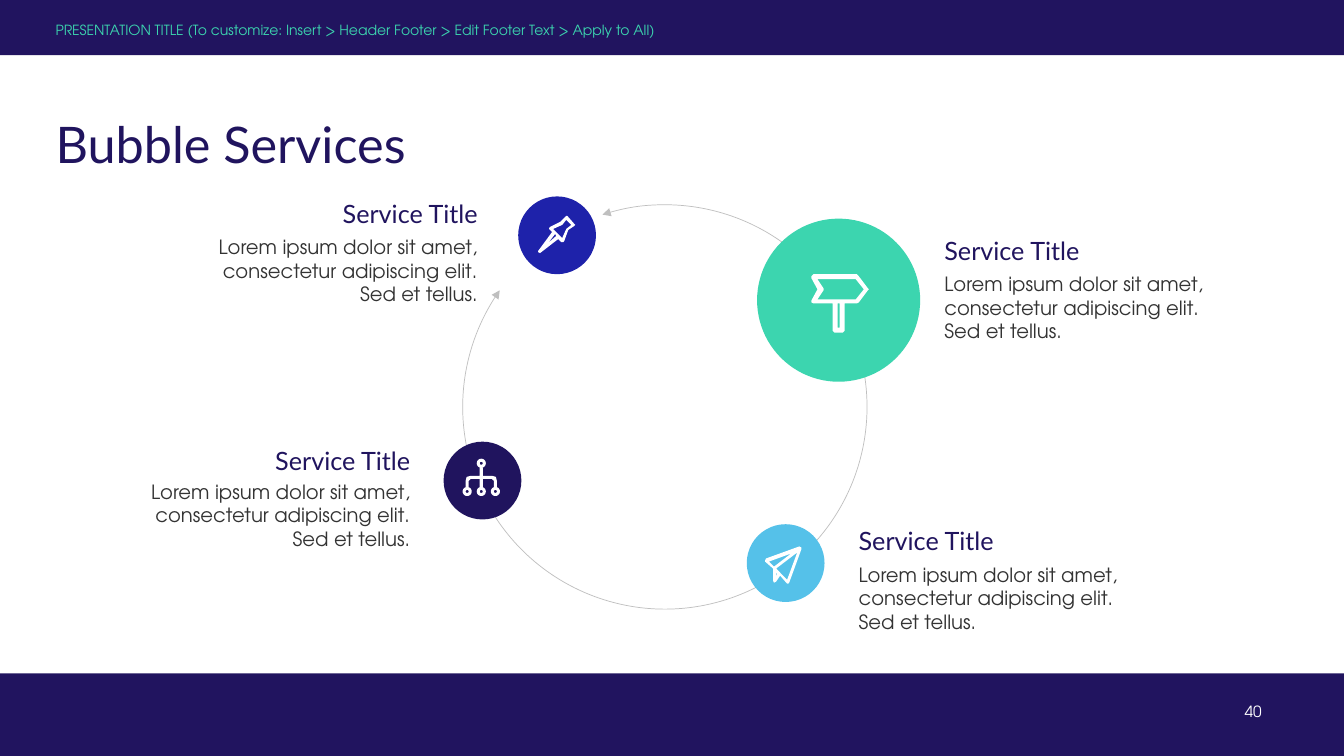
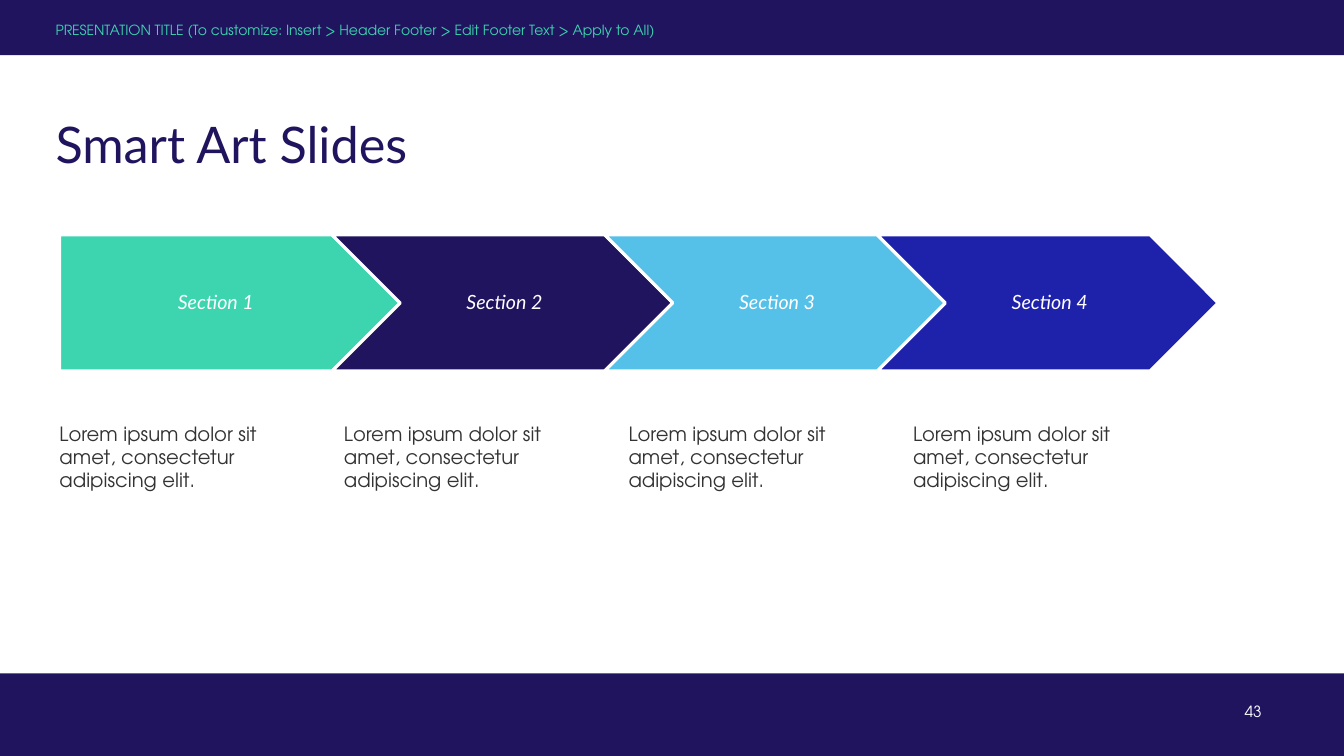
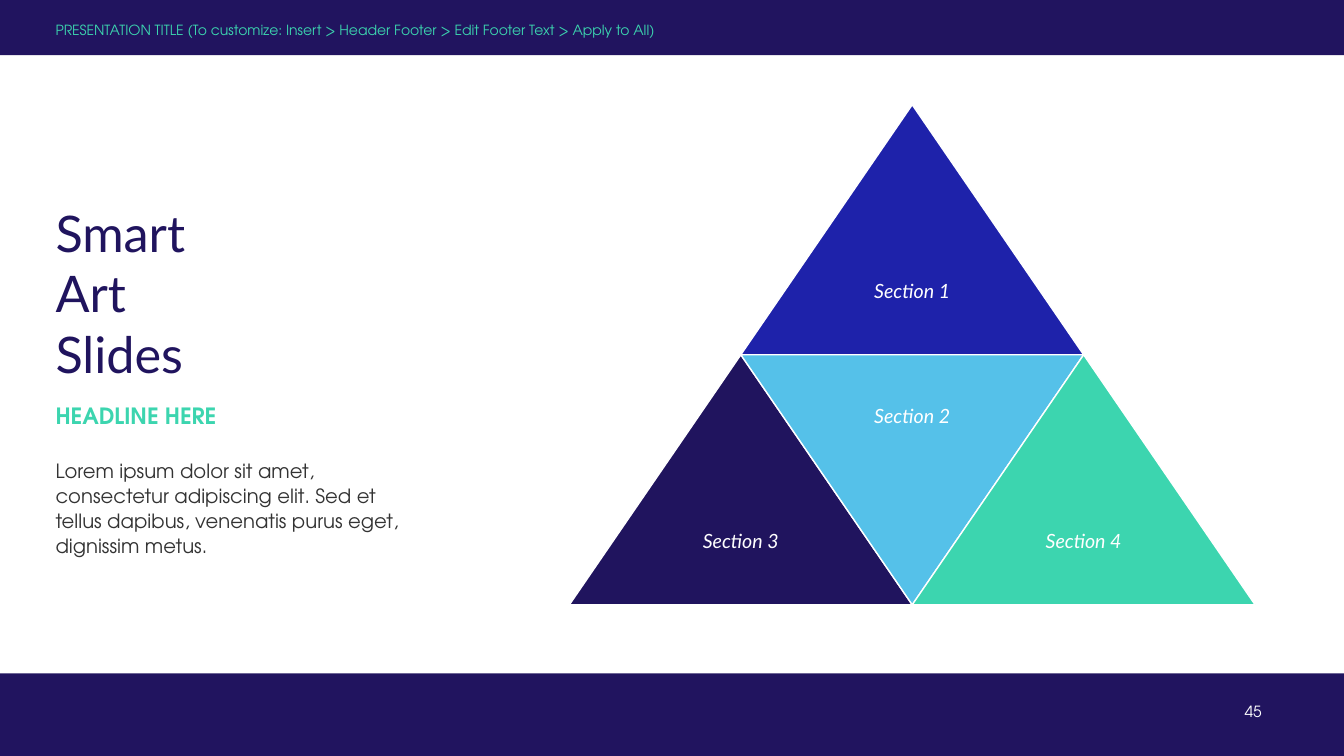
from dataclasses import dataclass, replace
from math import cos, pi, sin

from lxml import etree
from pptx import Presentation
from pptx.dml.color import RGBColor
from pptx.enum.shapes import MSO_SHAPE
from pptx.enum.text import MSO_ANCHOR, PP_ALIGN
from pptx.oxml.ns import qn
from pptx.shapes.autoshape import Shape
from pptx.slide import Slide
from pptx.text.text import TextFrame
from pptx.util import Cm, Pt

LEFT, CENTER, RIGHT = PP_ALIGN.LEFT, PP_ALIGN.CENTER, PP_ALIGN.RIGHT
TOP, MIDDLE = MSO_ANCHOR.TOP, MSO_ANCHOR.MIDDLE
RECT, OVAL, ARC = MSO_SHAPE.RECTANGLE, MSO_SHAPE.OVAL, MSO_SHAPE.ARC
PENTAGON, CHEVRON = MSO_SHAPE.PENTAGON, MSO_SHAPE.CHEVRON
TRIANGLE, INVERTED_TRIANGLE = MSO_SHAPE.ISOSCELES_TRIANGLE, MSO_SHAPE.FLOWCHART_MERGE

BAND, NAVY, BLUE, SKY, GREEN = "21145F", "20145E", "1E22AA", "55C1E9", "3CD5AF"
WHITE, GREY, INK = "FFFFFF", "BFBFBF", "333333"
HEADING_FONT, BODY_FONT = "Lato", "TeX Gyre Adventor"

SLIDE_W, SLIDE_H = 33.87, 19.05
MARGIN = 1.4
HEADER = "PRESENTATION TITLE (To customize: Insert > Header Footer > Edit Footer Text > Apply to All)"
LOREM = "Lorem ipsum dolor sit amet, consectetur adipiscing elit."

Box = tuple[float, float, float, float]
Insets = tuple[float, float, float, float]
Contour = list[tuple[float, float]]


@dataclass(frozen=True)
class TextStyle:
    font: str
    size: float
    color: str
    align: PP_ALIGN = LEFT
    anchor: MSO_ANCHOR = TOP
    spacing: float | Pt | None = None
    bold: bool = False
    italic: bool = False
    insets: Insets = (0, 0, 0, 0)


PADDED = (0, 0.13, 0, 0.13)
TITLE = TextStyle(HEADING_FONT, 36, NAVY, spacing=0.9)
STACKED_TITLE = replace(TITLE, anchor=MIDDLE, spacing=None)
RUNNING_HEAD = TextStyle(BODY_FONT, 10, GREEN, anchor=MIDDLE)
PAGE_NUMBER = TextStyle(BODY_FONT, 11, WHITE, align=RIGHT)
BODY = TextStyle(BODY_FONT, 14, INK, insets=PADDED)
HEADLINE = TextStyle(BODY_FONT, 16, GREEN, bold=True, insets=PADDED)
SERVICE_TITLE = TextStyle(HEADING_FONT, 18, NAVY, insets=PADDED)
SECTION = TextStyle(HEADING_FONT, 14, WHITE, CENTER, MIDDLE, 0.9, italic=True)


@dataclass(frozen=True)
class Icon:
    """Outlines and holes on a grid of hundredths of an inch."""
    x: float
    y: float
    contours: list[Contour]


@dataclass(frozen=True)
class Service:
    x: float
    y: float
    diameter: float
    color: str
    icon: Icon
    text_edge: float
    title_y: float
    body_y: float
    align: PP_ALIGN


@dataclass(frozen=True)
class Section:
    name: str
    color: str
    kind: MSO_SHAPE
    x: float
    y: float


def ring(cx: float, cy: float) -> list[Contour]:
    """Outer and inner circle of a small node."""
    angles = [k * pi / 12 for k in range(24)]
    return [[(cx + r * cos(a), cy + r * sin(a)) for a in angles] for r in (4.5, 1.5)]


PIN = Icon(13.56, 5.44, [
    [(36, 8), (29, 0), (28, 0), (22, 6), (12, 11), (11, 12), (11, 13), (14, 16), (0, 35),
     (0, 36), (2, 37), (20, 23), (23, 26), (25, 26), (26, 25), (30, 14), (36, 10), (37, 9)],
    [(10, 27), (17, 18), (18, 20)],
    [(28, 13), (24, 22), (15, 13), (24, 9), (28, 4), (33, 9)],
])
TREE = Icon(11.66, 11.56, [
    [(17, 9), (17, 17), (8, 17), (4, 18), (3, 22), (3, 28), (6, 28), (6, 22), (8, 20),
     (17, 20), (17, 28), (20, 28), (20, 20), (29, 20), (31, 22), (31, 28), (34, 28),
     (34, 22), (33, 18), (29, 17), (20, 17), (20, 9)],
    *ring(18.5, 4.5), *ring(4.5, 32.5), *ring(18.5, 32.5), *ring(32.5, 32.5),
])
PLANE = Icon(19.28, 13.77, [
    [(36, 1), (34, 0), (1, 12), (0, 14), (0, 15), (8, 22), (8, 34), (9, 36), (11, 35),
     (15, 29), (22, 37), (23, 37), (24, 36), (36, 3)],
    [(26, 7), (9, 20), (4, 15)],
    [(11, 30), (11, 26), (12, 27)],
    [(22, 33), (11, 22), (32, 6)],
])
SIGNPOST = Icon(20.45, 6.91, [
    [(56, 14), (47, 2), (45, 0), (2, 0), (0, 2), (0, 4), (6, 15), (0, 26), (0, 28), (2, 29),
     (21, 29), (21, 56), (23, 58), (31, 58), (33, 56), (33, 29), (45, 29), (47, 28),
     (56, 16), (57, 15)],
    [(28, 53), (26, 53), (26, 29), (28, 29)],
    [(44, 25), (6, 25), (12, 16), (12, 14), (6, 5), (44, 5), (52, 15)],
])

SERVICES = [
    Service(19.08, 5.51, 4.11, GREEN, SIGNPOST, 23.8, 5.79, 6.73, LEFT),
    Service(18.82, 13.21, 1.96, SKY, PLANE, 21.64, 13.11, 14.05, LEFT),
    Service(13.06, 4.95, 1.96, BLUE, PIN, 12.04, 4.88, 5.79, RIGHT),
    Service(11.18, 11.13, 1.96, NAVY, TREE, 10.34, 11.1, 11.96, RIGHT),
]


def rgb(color: str) -> RGBColor:
    return RGBColor.from_string(color)


def write(tf: TextFrame, text: str, style: TextStyle) -> None:
    tf.word_wrap = True
    tf.vertical_anchor = style.anchor
    tf.margin_left, tf.margin_top, tf.margin_right, tf.margin_bottom = map(Cm, style.insets)
    tf.text = text
    p = tf.paragraphs[0]
    p.alignment = style.align
    p.line_spacing = style.spacing
    for r in p.runs:
        r.font.name = style.font
        r.font.size = Pt(style.size)
        r.font.bold = style.bold
        r.font.italic = style.italic
        r.font.color.rgb = rgb(style.color)


def add_text(s: Slide, text: str, box: Box, style: TextStyle) -> None:
    write(s.shapes.add_textbox(*map(Cm, box)).text_frame, text, style)


def paint(sp: Shape, fill: str | None, line: str | None = None, width: float = 1) -> None:
    sp.shadow.inherit = False
    if fill:
        sp.fill.solid()
        sp.fill.fore_color.rgb = rgb(fill)
    else:
        sp.fill.background()
    if line:
        sp.line.color.rgb = rgb(line)
        sp.line.width = Pt(width)
    else:
        sp.line.fill.background()


def add_shape(s: Slide, kind: MSO_SHAPE, box: Box, fill: str | None,
              line: str | None = None, width: float = 1) -> Shape:
    sp = s.shapes.add_shape(kind, *map(Cm, box))
    paint(sp, fill, line, width)
    return sp


def add_icon(s: Slide, icon: Icon) -> None:
    unit = 2.54 / 100
    builder = None
    for contour in icon.contours:
        first, *rest = [(Cm(icon.x + x * unit), Cm(icon.y + y * unit)) for x, y in contour]
        if builder is None:
            builder = s.shapes.build_freeform(*first)
        else:
            builder.move_to(*first)
        builder.add_line_segments(rest, close=True)
    paint(builder.convert_to_shape(), WHITE)


def add_cycle_arc(s: Slide) -> None:
    """Open circle with an arrowhead at both ends."""
    sp = add_shape(s, ARC, (11.66, 5.16, 10.19, 10.19), None, GREY, 0.5)
    sp.rotation = 90
    for i, degrees in enumerate((162, 125.24)):
        sp.adjustments[i] = degrees * 0.6
    ln = sp.line._get_or_add_ln()
    for end in ("a:headEnd", "a:tailEnd"):
        etree.SubElement(ln, qn(end)).set("type", "triangle")


def add_section(s: Slide, section: Section, size: tuple[float, float],
                width: float, insets: Insets) -> None:
    box = (section.x, section.y, *size)
    sp = add_shape(s, section.kind, box, section.color, WHITE, width)
    write(sp.text_frame, section.name, replace(SECTION, insets=insets))


def new_slide(prs: Presentation, number: int) -> Slide:
    """Blank slide with the bands, running head and page number."""
    s = prs.slides.add_slide(prs.slide_layouts[6])
    add_shape(s, RECT, (0, 0, SLIDE_W, 1.39), BAND)
    add_shape(s, RECT, (0, 16.97, SLIDE_W, SLIDE_H - 16.97), BAND)
    add_text(s, HEADER, (MARGIN, 0.25, 29.36, 1.02), RUNNING_HEAD)
    add_text(s, str(number), (24.23, 17.7, 7.57, 0.61), PAGE_NUMBER)
    return s


def add_title(s: Slide, text: str) -> None:
    add_text(s, text, (MARGIN, 3.02, 29.41, 2.77), TITLE)


def bubble_slide(prs: Presentation) -> None:
    s = new_slide(prs, 40)
    add_title(s, "Bubble Services")
    add_cycle_arc(s)
    text_w = 6.87
    for sv in SERVICES:
        add_shape(s, OVAL, (sv.x, sv.y, sv.diameter, sv.diameter), sv.color)
        add_icon(s, sv.icon)
        x = sv.text_edge if sv.align == LEFT else sv.text_edge - text_w
        add_text(s, "Service Title", (x, sv.title_y, text_w, 1.02),
                 replace(SERVICE_TITLE, align=sv.align))
        add_text(s, f"{LOREM} Sed et tellus.", (x, sv.body_y, text_w, 2.06),
                 replace(BODY, align=sv.align))


def process_slide(prs: Presentation) -> None:
    s = new_slide(prs, 43)
    add_title(s, "Smart Art Slides")
    left = 1.5
    for i, color in enumerate((GREEN, NAVY, SKY, BLUE)):
        kind = CHEVRON if i else PENTAGON
        section = Section(f"Section {i + 1}", color, kind, left + i * 6.87, 5.92)
        add_section(s, section, (8.59, 3.43), 2.25, (0.15 if i else 0.2, 0.1, 0.05, 0.1))
        add_text(s, LOREM, (left + i * 7.17, 10.52, 5.74, 1.96),
                 replace(BODY, spacing=Pt(16.4)))


def pyramid_slide(prs: Presentation) -> None:
    s = new_slide(prs, 45)
    w, h = 8.64, 6.3
    x, y = 18.67, 2.64
    for section in (
        Section("Section 1", BLUE, TRIANGLE, x, y),
        Section("Section 3", NAVY, TRIANGLE, x - w / 2, y + h),
        Section("Section 2", SKY, INVERTED_TRIANGLE, x, y + h),
        Section("Section 4", GREEN, TRIANGLE, x + w / 2, y + h),
    ):
        add_section(s, section, (w, h), 1, (0.15, 0.15, 0.15, 0.15))
    add_text(s, "Smart\vArt\vSlides", (MARGIN, 4.9, 11.63, 4.95), STACKED_TITLE)
    add_text(s, "HEADLINE HERE", (MARGIN, 10.01, 8.84, 0.94), HEADLINE)
    add_text(s, f"{LOREM} Sed et tellus dapibus, venenatis purus eget, dignissim metus.",
             (MARGIN, 11.38, 8.84, 2.77), replace(BODY, spacing=Pt(18)))


def main() -> None:
    prs = Presentation()
    prs.slide_width, prs.slide_height = Cm(SLIDE_W), Cm(SLIDE_H)
    bubble_slide(prs)
    process_slide(prs)
    pyramid_slide(prs)
    prs.save("out.pptx")


if __name__ == "__main__":
    main()
